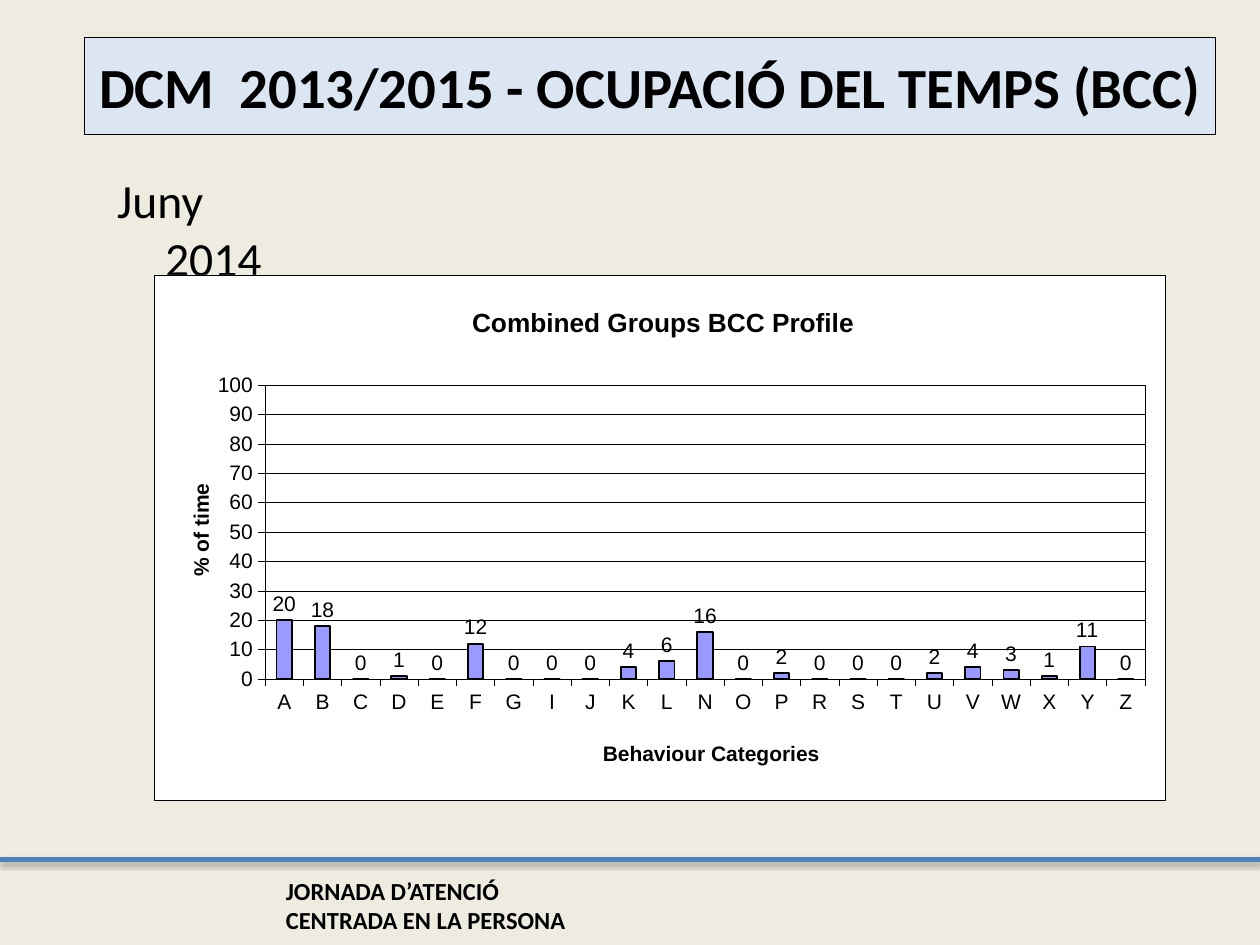
from lxml import etree
from pptx import Presentation
from pptx.chart.data import CategoryChartData
from pptx.dml.color import RGBColor
from pptx.enum.chart import XL_CHART_TYPE as ChartType, XL_LABEL_POSITION as LabelPosition
from pptx.enum.chart import XL_TICK_MARK as TickMark
from pptx.enum.shapes import MSO_CONNECTOR as Connector
from pptx.enum.text import MSO_ANCHOR as Anchor, MSO_AUTO_SIZE as AutoSize, PP_ALIGN as Align
from pptx.oxml import parse_xml
from pptx.oxml.ns import nsdecls, qn
from pptx.util import Inches, Pt

BLACK = RGBColor(0x00, 0x00, 0x00)
WHITE = RGBColor(0xFF, 0xFF, 0xFF)
CREAM = RGBColor(0xEE, 0xEC, 0xE1)
PALE_BLUE = RGBColor(0xDC, 0xE6, 0xF2)
RULE_BLUE = RGBColor(0x4F, 0x81, 0xBD)
LAVENDER = RGBColor(0x99, 0x99, 0xFF)

CATEGORIES = list("ABCDEFGIJKLNOPRSTUVWXYZ")
TIME_SHARES = [20, 18, 0, 1, 0, 12, 0, 0, 0, 4, 6, 16, 0, 2, 0, 0, 0, 2, 4, 3, 1, 11, 0]

SHADOW = (
    f'<a:effectLst {nsdecls("a")}><a:outerShdw blurRad="{Pt(3.1)}" dist="{Pt(1.8)}" '
    'dir="5400000" rotWithShape="0"><a:srgbClr val="000000"><a:alpha val="35000"/>'
    '</a:srgbClr></a:outerShdw></a:effectLst>'
)
WHITE_PANEL = (
    f'<c:spPr {nsdecls("c", "a")}><a:solidFill><a:srgbClr val="{WHITE}"/></a:solidFill>'
    f'<a:ln w="{Pt(0.25)}"><a:solidFill><a:srgbClr val="{BLACK}"/></a:solidFill></a:ln></c:spPr>'
)


def manual_layout(**parts):
    layout = etree.Element(qn("c:layout"))
    manual = etree.SubElement(layout, qn("c:manualLayout"))
    for name, value in parts.items():
        etree.SubElement(manual, qn(f"c:{name}")).set("val", str(value))
    return layout


def drop_layout(element):
    for layout in element.findall(qn("c:layout")):
        element.remove(layout)


class SlideBuilder:
    text_font = "Calibri"
    chart_font = "Arial"

    def __init__(self, page):
        self.page = page
        page.background.fill.solid()
        page.background.fill.fore_color.rgb = CREAM

    def style(self, font, size, bold=False, name=text_font):
        font.name, font.size, font.bold = name, Pt(size), bold
        font.color.rgb = BLACK

    def outline(self, line, width, color=BLACK):
        line.color.rgb = color
        line.width = Pt(width)

    def place(self, box, left, top, width, height):
        box.left, box.top = Inches(left), Inches(top)
        box.width, box.height = Inches(width), Inches(height)

    def fill_text(self, box, text, size, bold=False):
        frame = box.text_frame
        frame.text = text
        frame.word_wrap = True
        frame.auto_size = AutoSize.NONE
        para = frame.paragraphs[0]
        for span in para.runs:
            self.style(span.font, size, bold)
        return para

    def title(self, text, *area):
        box = self.page.shapes.title
        self.place(box, *area)
        box.fill.solid()
        box.fill.fore_color.rgb = PALE_BLUE
        self.outline(box.line, 0.75)
        self.fill_text(box, text, 32.4, bold=True).alignment = Align.CENTER
        box.text_frame.vertical_anchor = Anchor.MIDDLE

    def body(self, text, *area):
        box = self.page.placeholders[1]
        self.place(box, *area)
        para = self.fill_text(box, text, 27.2)
        para.space_before = Pt(0)
        properties = para._p.get_or_add_pPr()
        properties.set("marL", str(Inches(0.38)))
        properties.set("indent", str(Inches(-0.38)))
        etree.SubElement(properties, qn("a:buNone"))

    def label(self, text, *area):
        box = self.page.shapes.add_textbox(*map(Inches, area))
        self.fill_text(box, text, 14, bold=True)

    def rule(self, *ends):
        line = self.page.shapes.add_connector(Connector.STRAIGHT, *map(Inches, ends))
        self.outline(line.line, 3, RULE_BLUE)
        line._element.spPr.append(parse_xml(SHADOW))

    def chart_title(self, title, text, size, x, y):
        title.text_frame.text = text
        span = title.text_frame.paragraphs[0].runs[0]
        self.style(span.font, size, True, self.chart_font)
        drop_layout(title._element)
        layout = manual_layout(xMode="edge", yMode="edge", x=x, y=y)
        title._element.find(qn("c:tx")).addnext(layout)

    def axis(self, axis):
        axis.major_tick_mark = TickMark.OUTSIDE
        axis.minor_tick_mark = TickMark.NONE
        self.style(axis.tick_labels.font, 12, name=self.chart_font)
        self.outline(axis.format.line, 0.25)

    def column_chart(self, categories, values, *area):
        data = CategoryChartData(number_format="0")
        data.categories = categories
        data.add_series("Series 1", values)
        frame = self.page.shapes.add_chart(ChartType.COLUMN_CLUSTERED, *map(Inches, area), data)
        chart = frame.chart
        chart.has_legend = False
        self.style(chart.font, 12, name=self.chart_font)
        scale = chart.value_axis
        self.chart_title(chart.chart_title, "Combined Groups BCC Profile", 15, 0.31, 0.05)
        self.chart_title(chart.category_axis.axis_title, "Behaviour Categories", 12, 0.44, 0.88)
        self.chart_title(scale.axis_title, "% of time", 12, 0.03, 0.39)
        self.axis(chart.category_axis)
        self.axis(scale)
        scale.minimum_scale, scale.maximum_scale, scale.major_unit = 0, 100, 10
        scale.tick_labels.number_format = "0"
        scale.tick_labels.number_format_is_linked = False
        scale.has_major_gridlines = True
        self.outline(scale.major_gridlines.format.line, 0.25)

        plot = chart.plots[0]
        plot.vary_by_categories = False
        plot.gap_width = 150
        bars = plot.series[0]
        bars.format.fill.solid()
        bars.format.fill.fore_color.rgb = LAVENDER
        self.outline(bars.format.line, 1)
        labels = bars.data_labels
        labels.show_value = True
        labels.number_format = "0"
        labels.number_format_is_linked = False
        labels.position = LabelPosition.OUTSIDE_END
        self.style(labels.font, 12, name=self.chart_font)

        chart_root = chart._chartSpace.find(qn("c:chart"))
        chart_root.addnext(parse_xml(WHITE_PANEL))
        plot_area = chart_root.find(qn("c:plotArea"))
        drop_layout(plot_area)
        plot_area.insert(0, manual_layout(
            layoutTarget="inner", xMode="edge", yMode="edge", x=0.11, y=0.21, w=0.87, h=0.56))
        plot_area.append(parse_xml(WHITE_PANEL))


def main():
    deck = Presentation()
    deck.slide_width, deck.slide_height = Inches(10), Inches(7.5)
    builder = SlideBuilder(deck.slides.add_slide(deck.slide_layouts[1]))
    builder.label("JORNADA D’ATENCIÓ CENTRADA EN LA PERSONA", 2.17, 6.9, 2.68, 0.57)
    builder.rule(0, 6.82, 10, 6.82)
    builder.title("DCM  2013/2015 - OCUPACIÓ DEL TEMPS (BCC)", 0.67, 0.3, 8.98, 0.77)
    builder.body("Juny 2014", 0.83, 1.31, 1.73, 0.47)
    builder.column_chart(CATEGORIES, TIME_SHARES, 1.22, 2.18, 8.03, 4.17)
    deck.save("out.pptx")


if __name__ == "__main__":
    main()
